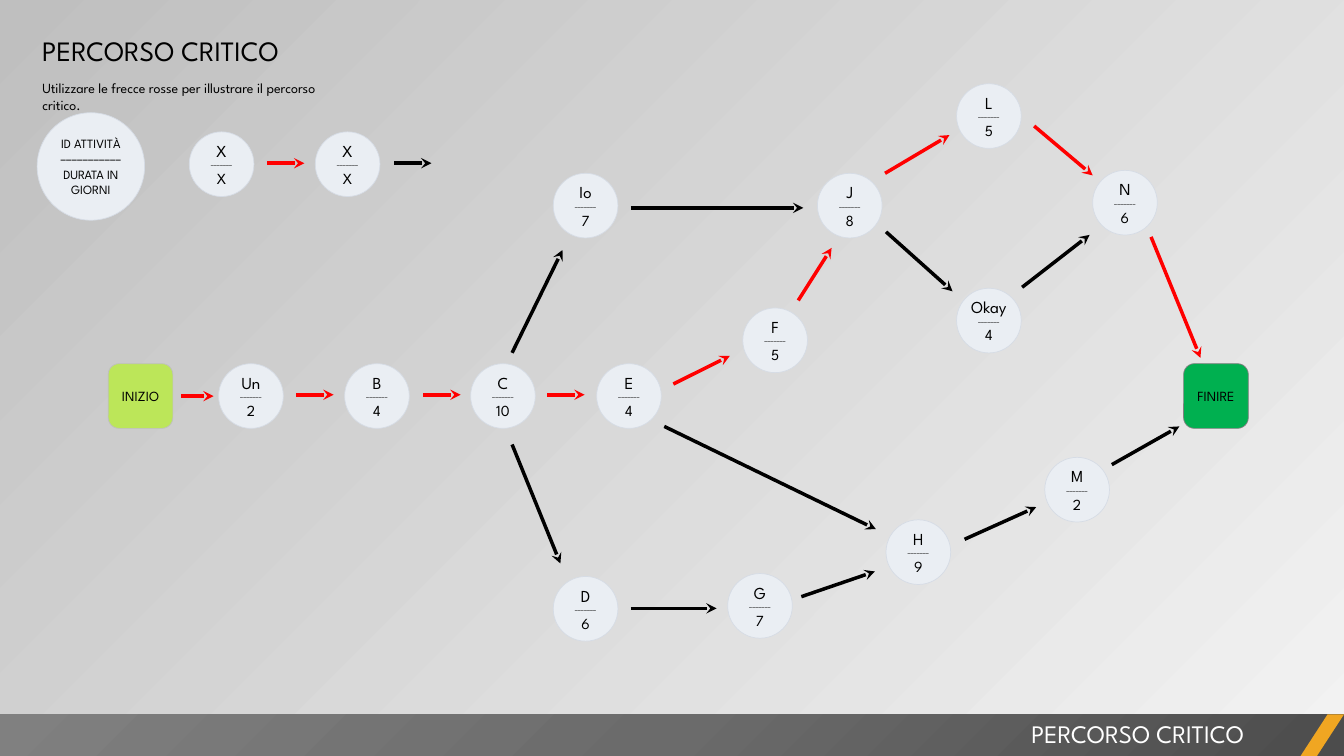
from dataclasses import dataclass
from typing import NamedTuple

from lxml.etree import SubElement
from pptx import Presentation
from pptx.dml.color import RGBColor
from pptx.enum.shapes import MSO_CONNECTOR as Connector, MSO_SHAPE as Preset
from pptx.enum.text import MSO_ANCHOR as Anchor, MSO_AUTO_SIZE as AutoSize, PP_ALIGN as Align
from pptx.oxml import parse_xml
from pptx.oxml.ns import nsdecls, qn
from pptx.shapes.autoshape import Shape
from pptx.slide import Slide
from pptx.util import Pt


@dataclass(frozen=True)
class Theme:
    font: str = "League Spartan"
    black: str = "000000"
    white: str = "FFFFFF"
    critical: str = "FF0000"
    node: str = "EAEEF3"
    node_line: str = "D6DCE5"
    start: str = "BCE659"
    start_line: str = "BFBFBF"
    finish: str = "00B050"
    finish_line: str = "808080"
    accent: str = "F0A622"
    background: tuple[str, str] = ("F2F2F2", "BFBFBF")
    footer: tuple[str, ...] = ("4C4C4C", "6B6B6B", "808080")
    title_size: float = 20
    footer_size: float = 18
    body_size: float = 10
    key_size: float = 9
    name_size: float = 12
    rule_size: float = 5
    days_size: float = 11
    outline: float = 0.5
    arrow: float = 2.5


class Box(NamedTuple):
    left: float
    top: float
    width: float
    height: float


class Line(NamedTuple):
    text: str
    size: float


class Activity(NamedTuple):
    name: str
    days: str
    left: float
    top: float


class Arrow(NamedTuple):
    x1: float
    y1: float
    x2: float
    y2: float
    color: str


class Caption(NamedTuple):
    line: Line
    box: Box
    color: str
    align: Align
    inset_left: float


THEME = Theme()
RED, BLACK = THEME.critical, THEME.black
SLIDE_WIDTH, SLIDE_HEIGHT = 960, 540
FOOTER_TOP, FOOTER_HEIGHT = 510.3, 30
NODE = 46.2
ROW_TOP, ROW_LEFT, ROW_STEP = 259.8, 156.2, 90
UPPER_TOP, KEY_TOP, KEY_LEFT = 123.8, 94.2, 135.2

MAIN_ROW = [
    Activity(name, days, ROW_LEFT + ROW_STEP * index, ROW_TOP)
    for index, (name, days) in enumerate([("Un", "2"), ("B", "4"), ("C", "10"), ("E", "4")])
]
KEY_ROW = [Activity("X", "X", KEY_LEFT + ROW_STEP * index, KEY_TOP) for index in range(2)]
BRANCHES = [
    Activity("Io", "7", 395.2, UPPER_TOP),
    Activity("D", "6", 395.2, 411.8),
    Activity("G", "7", 519.8, 409.7),
    Activity("H", "9", 632.9, 371.3),
    Activity("M", "2", 746.3, 326.7),
    Activity("J", "8", 583.9, UPPER_TOP),
    Activity("F", "5", 530.6, 220),
    Activity("L", "5", 683.3, 59.8),
    Activity("Okay", "4", 683.3, 205.9),
    Activity("N", "6", 780.5, 121.7),
]

ARROWS = [
    Arrow(129.6, 283, 152.6, 283, RED),
    Arrow(211.7, 282, 238.3, 282, RED),
    Arrow(302.4, 282, 329, 282, RED),
    Arrow(391, 282, 417.6, 282, RED),
    Arrow(481, 274.3, 521.3, 254.2, RED),
    Arrow(570.2, 214.6, 594, 177.1, RED),
    Arrow(632.2, 123.8, 678.2, 96.5, RED),
    Arrow(738.7, 90, 780.5, 125.3, RED),
    Arrow(822.2, 169.2, 857.5, 255.6, RED),
    Arrow(365.8, 252, 401.8, 178.6, BLACK),
    Arrow(450.7, 148.5, 573.8, 148.5, BLACK),
    Arrow(365.8, 317.5, 400.3, 402.5, BLACK),
    Arrow(450.7, 434.6, 511.9, 434.6, BLACK),
    Arrow(474.5, 304.6, 625.7, 378, BLACK),
    Arrow(572.4, 426.2, 625, 408.2, BLACK),
    Arrow(632.9, 165.6, 680.4, 208.1, BLACK),
    Arrow(730.1, 205.2, 778.3, 167.8, BLACK),
    Arrow(689, 385.2, 740.2, 362.2, BLACK),
    Arrow(794.2, 331.9, 842.4, 304.6, BLACK),
    Arrow(190.8, 116.6, 217.4, 116.6, RED),
    Arrow(281.5, 116.6, 308.2, 116.6, BLACK),
]

CAPTIONS = [
    Caption(Line("PERCORSO CRITICO", THEME.footer_size), Box(378, 509.8, 517.7, 29),
            THEME.white, Align.RIGHT, 7.2),
    Caption(Line("PERCORSO CRITICO", THEME.title_size), Box(30.2, 20.2, 341.3, 31.5),
            BLACK, Align.LEFT, 0),
    Caption(Line("Utilizzare le frecce rosse per illustrare il percorso critico.", THEME.body_size),
            Box(30.2, 53.3, 223.9, 19.4), BLACK, Align.LEFT, 0),
]


def write_lines(shape: Shape, lines: list[Line], color: str, align: Align) -> None:
    frame = shape.text_frame
    for index, line in enumerate(lines):
        paragraph = frame.add_paragraph() if index else frame.paragraphs[0]
        paragraph.alignment = align
        run = paragraph.add_run()
        run.text = line.text
        run.font.name = THEME.font
        run.font.size = Pt(line.size)
        run.font.color.rgb = RGBColor.from_string(color)


def add_block(slide: Slide, preset: Preset, box: Box, fill: str, outline: str = "") -> Shape:
    shape = slide.shapes.add_shape(preset, *map(Pt, box))
    shape.shadow.inherit = False
    shape.fill.solid()
    shape.fill.fore_color.rgb = RGBColor.from_string(fill)
    if outline:
        shape.line.color.rgb = RGBColor.from_string(outline)
        shape.line.width = Pt(THEME.outline)
    else:
        shape.line.fill.background()
    return shape


def add_label(slide: Slide, preset: Preset, box: Box, fill: str, outline: str, lines: list[Line]) -> None:
    shape = add_block(slide, preset, box, fill, outline)
    frame = shape.text_frame
    frame.word_wrap = True
    frame.vertical_anchor = Anchor.MIDDLE
    frame.margin_left = frame.margin_top = frame.margin_right = frame.margin_bottom = 0
    write_lines(shape, lines, BLACK, Align.CENTER)


def add_activity(slide: Slide, activity: Activity) -> None:
    lines = [
        Line(activity.name, THEME.name_size),
        Line("–" * 7, THEME.rule_size),
        Line(activity.days, THEME.days_size),
    ]
    box = Box(activity.left, activity.top, NODE, NODE)
    add_label(slide, Preset.OVAL, box, THEME.node, THEME.node_line, lines)


def add_arrow(slide: Slide, arrow: Arrow) -> None:
    connector = slide.shapes.add_connector(Connector.STRAIGHT, *map(Pt, arrow[:4]))
    connector.line.color.rgb = RGBColor.from_string(arrow.color)
    connector.line.width = Pt(THEME.arrow)
    properties = connector._element.spPr
    SubElement(properties.find(qn("a:ln")), qn("a:tailEnd"), type="stealth")
    SubElement(properties, qn("a:effectLst"))


def add_caption(slide: Slide, caption: Caption) -> None:
    shape = slide.shapes.add_textbox(*map(Pt, caption.box))
    frame = shape.text_frame
    frame.word_wrap = True
    frame.auto_size = AutoSize.SHAPE_TO_FIT_TEXT
    frame.margin_left = Pt(caption.inset_left)
    write_lines(shape, [caption.line], caption.color, caption.align)


def paint_background(slide: Slide) -> None:
    fill = slide.background.fill
    fill.gradient()
    fill.gradient_angle = 135
    for stop, color in zip(fill.gradient_stops, THEME.background):
        stop.color.rgb = RGBColor.from_string(color)
    first_color = next(slide.background._cSld.iter(qn("a:srgbClr")))
    SubElement(first_color, qn("a:alpha"), val="40000")


def add_footer(slide: Slide) -> None:
    band = add_block(slide, Preset.RECTANGLE, Box(0, FOOTER_TOP, SLIDE_WIDTH, FOOTER_HEIGHT), THEME.footer[0])
    stops = "".join(
        f'<a:gs pos="{index * 50000}"><a:srgbClr val="{color}"/></a:gs>'
        for index, color in enumerate(THEME.footer)
    )
    gradient = parse_xml(
        f'<a:gradFill {nsdecls("a")}><a:gsLst>{stops}</a:gsLst>'
        '<a:path path="circle"><a:fillToRect l="100000" t="100000"/></a:path></a:gradFill>'
    )
    properties = band._element.spPr
    properties.replace(properties.find(qn("a:solidFill")), gradient)
    stripe = add_block(slide, Preset.PARALLELOGRAM, Box(928.8, FOOTER_TOP, 31.2, FOOTER_HEIGHT), THEME.accent)
    stripe.adjustments[0] = 0.65


def main() -> None:
    presentation = Presentation()
    presentation.slide_width, presentation.slide_height = Pt(SLIDE_WIDTH), Pt(SLIDE_HEIGHT)
    slide = presentation.slides.add_slide(presentation.slide_layouts[6])
    paint_background(slide)
    add_footer(slide)
    for caption in CAPTIONS:
        add_caption(slide, caption)
    key_lines = [Line(text, THEME.key_size) for text in ("ID ATTIVITÀ", "–" * 11, "DURATA IN GIORNI")]
    add_label(slide, Preset.OVAL, Box(26.5, 80.5, 76.8, 76.8), THEME.node, THEME.node_line, key_lines)
    for text, left, fill, outline in (
        ("INIZIO", 77.3, THEME.start, THEME.start_line),
        ("FINIRE", 845.5, THEME.finish, THEME.finish_line),
    ):
        box = Box(left, ROW_TOP, NODE, NODE)
        add_label(slide, Preset.ROUNDED_RECTANGLE, box, fill, outline, [Line(text, THEME.body_size)])
    for activity in MAIN_ROW + BRANCHES + KEY_ROW:
        add_activity(slide, activity)
    for arrow in ARROWS:
        add_arrow(slide, arrow)
    presentation.save("out.pptx")


if __name__ == "__main__":
    main()
